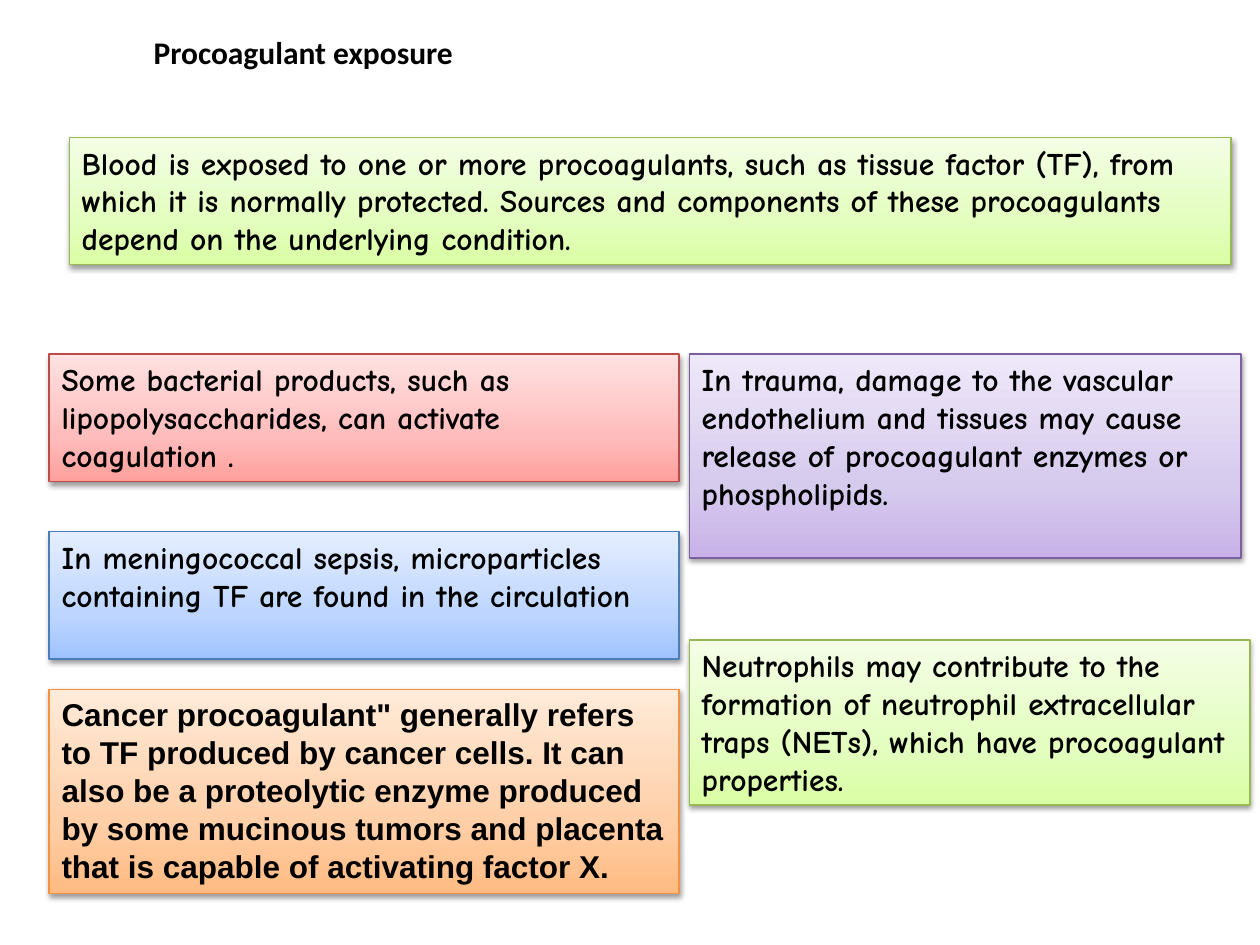
from copy import deepcopy

from lxml.etree import SubElement
from pptx import Presentation
from pptx.dml.color import RGBColor
from pptx.enum.shapes import MSO_SHAPE
from pptx.enum.text import MSO_ANCHOR, PP_ALIGN
from pptx.oxml.ns import qn
from pptx.util import Inches, Pt

BLACK = RGBColor(0x00, 0x00, 0x00)

# Each palette: bottom, middle and top of the gradient, then the outline
GREEN = [RGBColor.from_string(c) for c in ("DAFEA4", "E3FEBF", "F4FEE6", "97B853")]
RED = [RGBColor.from_string(c) for c in ("FFA09D", "FFBCBC", "FFE2E2", "BD4B48")]
BLUE = [RGBColor.from_string(c) for c in ("9FC3FF", "BDD5FF", "E4EEFF", "4A7DBA")]
ORANGE = [RGBColor.from_string(c) for c in ("FFBB82", "FFCFA8", "FFEBD9", "F5913F")]
PURPLE = [RGBColor.from_string(c) for c in ("C8B2E9", "D6CAED", "EFE8FA", "7C5F9F")]
STOPS = (0, 0.35, 1)

LEFT, RIGHT = 0.39, 5.47   # columns
LEFT_WIDTH = 5
UPPER_ROW = 2.81
THREE_LINES, FOUR_LINES, FIVE_LINES = 1.01, 1.31, 1.62

CARDS = [
    (0.55, 1.09, 9.22, THREE_LINES, GREEN, "Comic Neue",
     "Blood is exposed to one or more procoagulants, such as tissue factor (TF), "
     "from which it is normally protected. Sources and components of these "
     "procoagulants depend on the underlying condition."),
    (LEFT, UPPER_ROW, LEFT_WIDTH, THREE_LINES, RED, "Comic Neue",
     "Some bacterial products, such as lipopolysaccharides, can activate coagulation ."),
    (LEFT, 4.22, LEFT_WIDTH, THREE_LINES, BLUE, "Comic Neue",
     "In meningococcal sepsis, microparticles containing TF are found in the circulation"),
    (LEFT, 5.47, LEFT_WIDTH, FIVE_LINES, ORANGE, "Arial",
     'Cancer procoagulant" generally refers to TF produced by cancer cells. It can '
     "also be a proteolytic enzyme produced by some mucinous tumors and placenta "
     "that is capable of activating factor X."),
    (RIGHT, UPPER_ROW, 4.38, FIVE_LINES, PURPLE, "Comic Neue",
     "In trauma, damage to the vascular endothelium and tissues may cause release "
     "of procoagulant enzymes or phospholipids."),
    (RIGHT, 5.08, 4.45, FOUR_LINES, GREEN, "Comic Neue",
     "Neutrophils may contribute to the formation of neutrophil extracellular traps "
     "(NETs), which have procoagulant properties."),
]


def write(box, text, font):
    frame = box.text_frame
    frame.word_wrap = True
    frame.vertical_anchor = MSO_ANCHOR.TOP
    para = frame.paragraphs[0]
    para.alignment = PP_ALIGN.LEFT
    span = para.add_run()
    span.text = text
    span.font.name = font
    span.font.size = Pt(18)
    span.font.bold = True
    span.font.color.rgb = BLACK


def add_soft_shadow(box):
    box.shadow.inherit = False
    effects = box._element.spPr.find(qn("a:effectLst"))
    shadow = SubElement(effects, qn("a:outerShdw"), blurRad=str(Pt(3.1)),
                        dist=str(Pt(1.6)), dir="5400000", rotWithShape="0")
    color = SubElement(shadow, qn("a:srgbClr"), val=str(BLACK))
    SubElement(color, qn("a:alpha"), val="38000")


deck = Presentation()
deck.slide_width, deck.slide_height = Inches(10), Inches(7.5)
page = deck.slides.add_slide(deck.slide_layouts[6])

title = page.shapes.add_textbox(Inches(1.12), Inches(0.21), Inches(2.78), Inches(0.4))
write(title, "Procoagulant exposure", "Calibri")

for left, top, width, height, palette, font, text in CARDS:
    card = page.shapes.add_shape(MSO_SHAPE.RECTANGLE, Inches(left), Inches(top),
                                 Inches(width), Inches(height))
    card.fill.gradient()
    card.fill.gradient_angle = 90
    stop_list = card._element.spPr.find(".//" + qn("a:gsLst"))
    stop_list.append(deepcopy(stop_list[0]))
    for stop, position, color in zip(card.fill.gradient_stops, STOPS, palette):
        stop.position = position
        stop.color.rgb = color
    card.line.color.rgb = palette[-1]
    card.line.width = Pt(0.75)
    add_soft_shadow(card)
    write(card, text, font)

deck.save("out.pptx")
